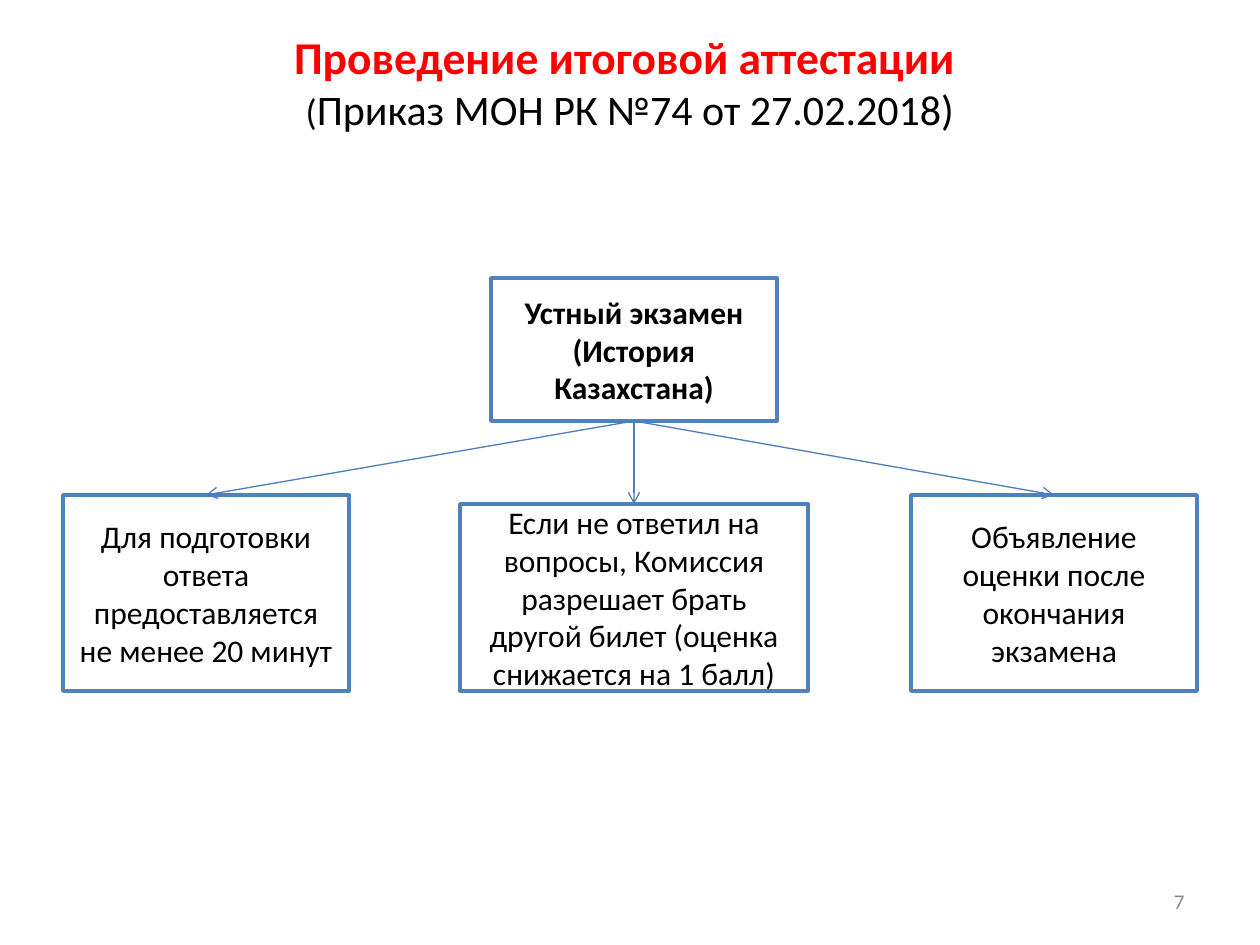
from dataclasses import dataclass

from lxml.etree import SubElement
from pptx import Presentation
from pptx.dml.color import RGBColor
from pptx.enum.shapes import MSO_CONNECTOR as CONN, MSO_SHAPE as SHAPE
from pptx.enum.text import MSO_ANCHOR as ANCHOR, PP_ALIGN as ALIGN
from pptx.oxml.ns import qn
from pptx.util import Emu, Pt

PX_PER_INCH = 126
TOP, BOTTOM = 0, 2  # connection sites of a rectangle


def px(n):
    return Emu(round(n * 914400 / PX_PER_INCH))


@dataclass(frozen=True)
class Theme:
    font: str = "Calibri"
    white: str = "FFFFFF"
    ink: str = "000000"
    accent: str = "FF0000"
    muted: str = "898989"
    border: str = "4F81BD"
    arrow: str = "4B7EBC"
    title: int = 26
    subtitle: int = 24
    bracket: int = 21
    body: int = 18
    small: int = 12
    border_width: float = 2
    arrow_width: float = 0.75


class Builder:
    def __init__(self, slide, theme):
        self.s, self.t = slide, theme

    def frame(self, sp, align):
        tf = sp.text_frame
        tf.word_wrap = True
        tf.vertical_anchor = ANCHOR.MIDDLE
        p = tf.paragraphs[0]
        p.alignment = align
        return p

    def run(self, p, text, size, color, bold=False):
        r = p.add_run()
        r.text = text
        r.font.name = self.t.font
        r.font.size = Pt(size)
        r.font.bold = bold
        r.font.color.rgb = RGBColor.from_string(color)

    def text(self, x, y, w, h, align, bottom_inset=6):
        sp = self.s.shapes.add_textbox(px(x), px(y), px(w), px(h))
        sp.text_frame.margin_bottom = px(bottom_inset)
        return self.frame(sp, align)

    def box(self, center, y, w, h, text, bold=False):
        sp = self.s.shapes.add_shape(
            SHAPE.RECTANGLE, px(center - w // 2), px(y), px(w), px(h))
        sp.shadow.inherit = False
        sp.fill.solid()
        sp.fill.fore_color.rgb = RGBColor.from_string(self.t.white)
        sp.line.color.rgb = RGBColor.from_string(self.t.border)
        sp.line.width = Pt(self.t.border_width)
        p = self.frame(sp, ALIGN.CENTER)
        self.run(p, text, self.t.body, self.t.ink, bold)
        return sp

    def arrow(self, parent, child):
        c = self.s.shapes.add_connector(CONN.STRAIGHT, 0, 0, 0, 0)
        c.begin_connect(parent, BOTTOM)
        c.end_connect(child, TOP)
        c.line.color.rgb = RGBColor.from_string(self.t.arrow)
        c.line.width = Pt(self.t.arrow_width)
        SubElement(c.line._get_or_add_ln(), qn("a:tailEnd"), type="arrow")
        SubElement(c._element.spPr, qn("a:effectLst"))


def main():
    prs = Presentation()
    prs.slide_width, prs.slide_height = px(1260), px(945)
    theme = Theme()
    b = Builder(prs.slides.add_slide(prs.slide_layouts[6]), theme)

    # Title, raised by a deeper bottom inset
    p = b.text(63, 40, 1134, 127, ALIGN.CENTER, bottom_inset=50)
    b.run(p, "Проведение итоговой аттестации ", theme.title, theme.accent, True)
    p.add_line_break()
    b.run(p, "(", theme.bracket, theme.ink)
    b.run(p, "Приказ МОН РК №74 от 27.02.2018)", theme.subtitle, theme.ink)

    # Exam and its rules: centre, width and height of each box, on one base line
    base = 691
    exam = b.box(634, 278, 286, 143, "Устный экзамен (История Казахстана)", True)
    rules = [
        (206, 286, 196, "Для подготовки ответа предоставляется не менее 20 минут"),
        (634, 348, 187, "Если не ответил на вопросы, Комиссия разрешает брать "
                        "другой билет (оценка снижается на 1 балл)"),
        (1054, 286, 196, "Объявление оценки после окончания экзамена"),
    ]
    for center, w, h, text in rules:
        b.arrow(exam, b.box(center, base - h, w, h, text))

    # Slide number
    p = b.text(903, 876, 294, 50, ALIGN.RIGHT)
    b.run(p, "7", theme.small, theme.muted)

    prs.save("out.pptx")


if __name__ == "__main__":
    main()
